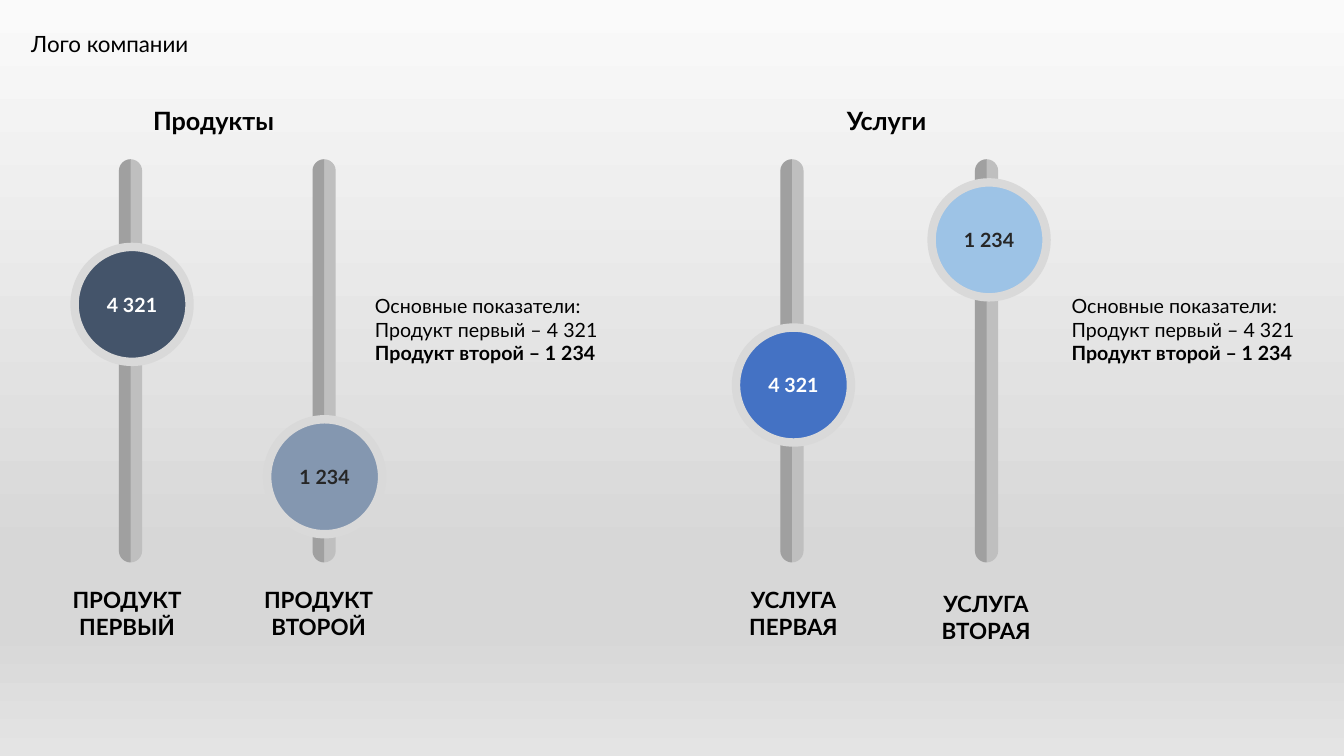
"""Builds a slide comparing products and services on vertical sliders."""
from math import cos, pi, sin

from lxml.etree import SubElement
from pptx import Presentation
from pptx.dml.color import RGBColor
from pptx.enum.shapes import MSO_SHAPE
from pptx.enum.text import MSO_ANCHOR, MSO_AUTO_SIZE, PP_ALIGN
from pptx.oxml.ns import qn
from pptx.util import Inches, Pt

LOGO = ("Лого компании", (0.21, 0.25, 1.76, 0.37))
INDICATORS = [
    ("Основные показатели:", False),
    ("Продукт первый – 4 321", False),
    ("Продукт второй – 1 234", True),
]
GROUPS = [
    {
        "heading": "Продукты", "heading_left": 1.42, "indicators_left": 3.62,
        "sliders": [
            {"label": ["ПРОДУКТ", "ПЕРВЫЙ"], "label_at": (1.26, 5.77), "bar_left": 1.18,
             "value": "4 321", "knob": (0.74, 2.45), "fill": "44546A", "ink": "white"},
            {"label": ["ПРОДУКТ", "ВТОРОЙ"], "label_at": (3.16, 5.77), "bar_left": 3.1,
             "value": "1 234", "knob": (2.65, 4.16), "fill": "8497B0", "ink": "dark"},
        ],
    },
    {
        "heading": "Услуги", "heading_left": 8.3, "indicators_left": 10.53,
        "sliders": [
            {"label": ["УСЛУГА", "ПЕРВАЯ"], "label_at": (7.87, 5.77), "bar_left": 7.74,
             "value": "4 321", "knob": (7.3, 3.25), "fill": "4472C4", "ink": "white"},
            {"label": ["УСЛУГА", "ВТОРАЯ"], "label_at": (9.78, 5.81), "bar_left": 9.67,
             "value": "1 234", "knob": (9.24, 1.81), "fill": "9DC3E6", "ink": "dark"},
        ],
    },
]
THEME = {
    "font": "Lato",
    "black": "000000", "white": "FFFFFF", "dark": "262626",
    "bar": "BFBFBF", "ring": "D9D9D9", "shade_opacity": 16,
    "background": [(0, "FAFAFA"), (74, "D7D7D7"), (83, "D7D7D7"), (100, "E4E4E4")],
    "heading": 18, "label": 16, "body": 14,
}
BAR_TOP, BAR_WIDTH, BAR_HEIGHT = 1.58, 0.23, 4
KNOB_SIZE, RING_WIDTH = 1.14, 6
LABEL_WIDTH = 1.71
ARC_STEPS = 12


def rgb(name):
    return RGBColor.from_string(THEME.get(name, name))


def write(frame, lines, size, ink="black", align=PP_ALIGN.LEFT):
    for index, (text, bold) in enumerate(lines):
        paragraph = frame.paragraphs[0] if index == 0 else frame.add_paragraph()
        paragraph.alignment = align
        run = paragraph.add_run()
        run.text = text
        run.font.name = THEME["font"]
        run.font.size = Pt(THEME[size])
        run.font.bold = bold
        run.font.color.rgb = rgb(ink)


def add_text(slide, box, lines, size, align=PP_ALIGN.LEFT, wrap=True):
    frame = slide.shapes.add_textbox(*map(Inches, box)).text_frame
    frame.word_wrap = wrap
    frame.auto_size = MSO_AUTO_SIZE.SHAPE_TO_FIT_TEXT
    write(frame, lines, size, align=align)


def paint(shape, fill):
    shape.shadow.inherit = False
    shape.fill.solid()
    shape.fill.fore_color.rgb = rgb(fill)
    shape.line.fill.background()


def paint_background(slide):
    fill = slide.background.fill
    fill.gradient()
    fill.gradient_angle = 270
    stops = slide.background._cSld.find(".//" + qn("a:gsLst"))
    for stop in list(stops):
        stops.remove(stop)
    for position, color in THEME["background"]:
        stop = SubElement(stops, qn("a:gs"), pos=str(position * 1000))
        SubElement(stop, qn("a:srgbClr"), val=color)


def add_bar(slide, left):
    bar = slide.shapes.add_shape(
        MSO_SHAPE.ROUNDED_RECTANGLE, *map(Inches, (left, BAR_TOP, BAR_WIDTH, BAR_HEIGHT)))
    bar.adjustments[0] = 0.5
    paint(bar, "bar")

    radius = BAR_WIDTH / 2
    angles = [pi / 2 * step / ARC_STEPS for step in range(ARC_STEPS + 1)]
    upper = [(left + radius * (1 - sin(a)), BAR_TOP + radius * (1 - cos(a))) for a in angles]
    lower = [(x, 2 * BAR_TOP + BAR_HEIGHT - y) for x, y in reversed(upper)]
    outline = [(Inches(x), Inches(y)) for x, y in upper + lower]
    builder = slide.shapes.build_freeform(*outline[0])
    builder.add_line_segments(outline[1:], close=True)
    shade = builder.convert_to_shape()
    paint(shade, "black")
    color = shade._element.spPr.find(qn("a:solidFill"))[0]
    SubElement(color, qn("a:alpha"), val=str(THEME["shade_opacity"] * 1000))


def add_knob(slide, slider):
    knob = slide.shapes.add_shape(
        MSO_SHAPE.OVAL, *map(Inches, (*slider["knob"], KNOB_SIZE, KNOB_SIZE)))
    paint(knob, slider["fill"])
    knob.line.color.rgb = rgb("ring")
    knob.line.width = Pt(RING_WIDTH)
    frame = knob.text_frame
    frame.margin_left = frame.margin_right = 0
    frame.vertical_anchor = MSO_ANCHOR.MIDDLE
    write(frame, [(slider["value"], True)], "body", slider["ink"], PP_ALIGN.CENTER)


def add_slider(slide, slider):
    add_bar(slide, slider["bar_left"])
    add_knob(slide, slider)
    center, top = slider["label_at"]
    add_text(slide, (center - LABEL_WIDTH / 2, top, LABEL_WIDTH, 0.64),
             [(line, True) for line in slider["label"]], "label", PP_ALIGN.CENTER)


def main():
    deck = Presentation()
    deck.slide_width, deck.slide_height = Inches(13.33), Inches(7.5)
    slide = deck.slides.add_slide(deck.slide_layouts[6])
    paint_background(slide)
    logo, logo_box = LOGO
    add_text(slide, logo_box, [(logo, False)], "label", PP_ALIGN.CENTER, wrap=False)
    for group in GROUPS:
        add_text(slide, (group["heading_left"], 1, 1.91, 0.4),
                 [(group["heading"], True)], "heading")
        for slider in group["sliders"]:
            add_slider(slide, slider)
        add_text(slide, (group["indicators_left"], 2.87, 2.8, 0.81), INDICATORS, "body")
    deck.save("out.pptx")


if __name__ == "__main__":
    main()
